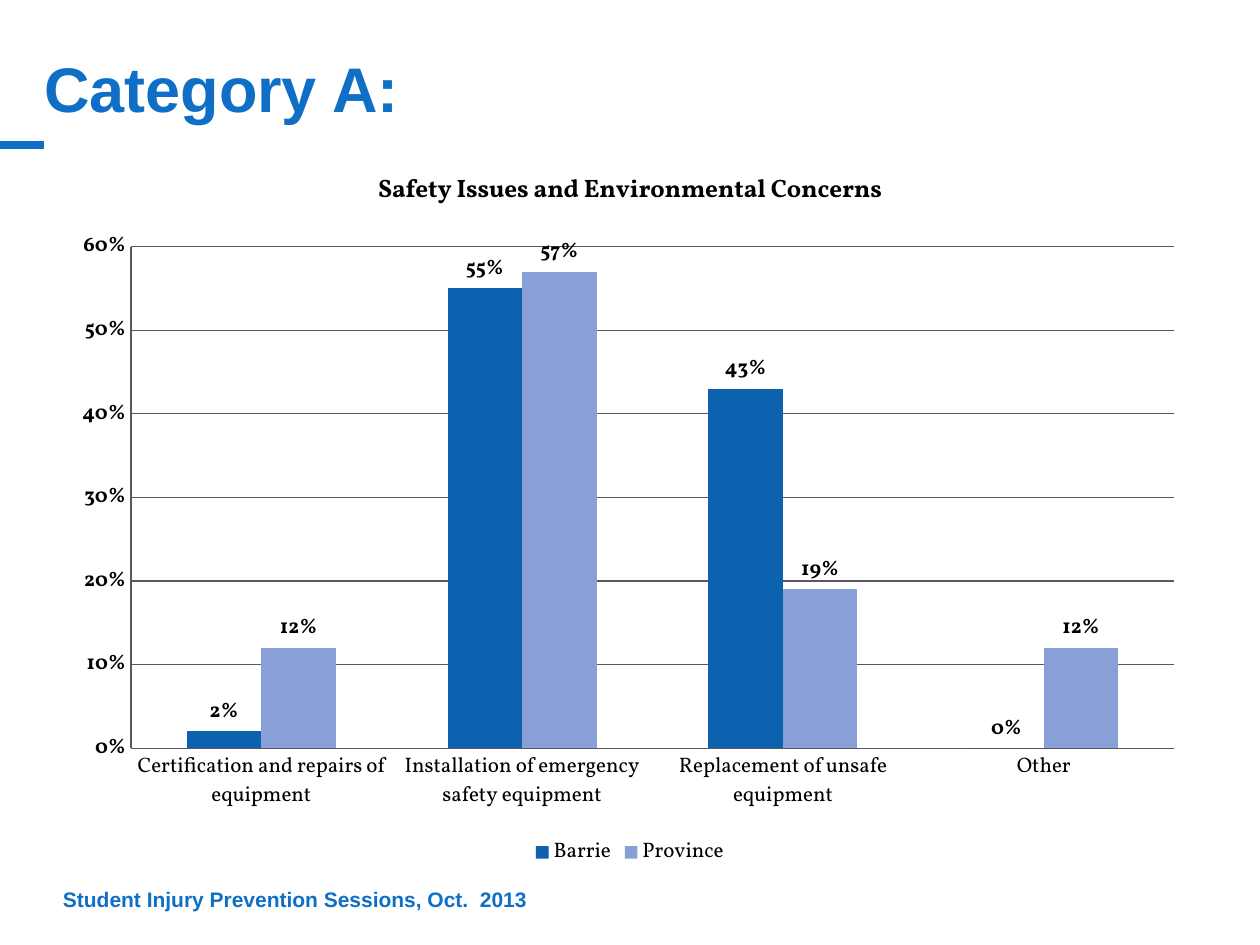
"""Build the Category A slide comparing Barrie with the province."""
from lxml import etree
from pptx import Presentation
from pptx import util as u
from pptx.chart.data import CategoryChartData
from pptx.dml.color import RGBColor
from pptx.enum import chart as c
from pptx.enum import shapes, text
from pptx.oxml import parse_xml
from pptx.oxml.ns import nsdecls, qn

TITLE = "Category A:"
FOOTER = "Student Injury Prevention Sessions, Oct.  2013"
CHART_TITLE = "Safety Issues and Environmental Concerns"
CATEGORIES = [
    "Certification and repairs of equipment",
    "Installation of emergency safety equipment",
    "Replacement of unsafe equipment",
    "Other",
]
SERIES = [
    ("Barrie", [0.02, 0.55, 0.43, 0], "barrie"),
    ("Province", [0.12, 0.57, 0.19, 0.12], "province"),
]
PLOT_AREA = {"x": 0.06, "y": 0.14, "w": 0.92, "h": 0.69}
THEME = {
    "accent": "0F6FC6", "barrie": "0C62AF", "province": "889FD7",
    "ink": "000000", "grid": "595959",
    "font": "Arial", "chart_font": "Vollkorn",
    "title": 36, "footer": 12, "chart_title": 14.4, "chart": 12,
}


def color(name):
    return RGBColor.from_string(THEME[name])


def style_font(font, size, ink="ink", face="chart_font", bold=False):
    font.size, font.name, font.bold = u.Pt(THEME[size]), THEME[face], bold
    font.color.rgb = color(ink)


def write(frame, words, *, top_inset=0, **style):
    frame.text = words
    frame.word_wrap = True
    frame.auto_size = text.MSO_AUTO_SIZE.NONE
    frame.vertical_anchor = text.MSO_ANCHOR.BOTTOM
    frame.margin_left = frame.margin_right = frame.margin_bottom = 0
    frame.margin_top = u.Inches(top_inset)
    paragraph = frame.paragraphs[0]
    paragraph.alignment = text.PP_ALIGN.LEFT
    style_font(paragraph.runs[0].font, **style)


def place(shape, *box):
    shape.left, shape.top, shape.width, shape.height = map(u.Inches, box)


def add_accent_line(slide):
    line = slide.shapes.add_connector(
        shapes.MSO_CONNECTOR.STRAIGHT, 0, u.Inches(1.15), u.Inches(0.35), u.Inches(1.15))
    line.line.color.rgb = color("accent")
    line.line.width = u.Pt(4.75)
    etree.SubElement(line.element.spPr, qn("a:effectLst"))


def set_plot_area(chart):
    plot_area = chart.element.find(".//" + qn("c:plotArea"))
    for layout in plot_area.findall(qn("c:layout")):
        plot_area.remove(layout)
    modes = '<c:xMode val="edge"/><c:yMode val="edge"/>'
    sizes = "".join(f'<c:{key} val="{value}"/>' for key, value in PLOT_AREA.items())
    plot_area.insert(0, parse_xml(
        f'<c:layout {nsdecls("c")}><c:manualLayout><c:layoutTarget val="inner"/>'
        f"{modes}{sizes}</c:manualLayout></c:layout>"))


def format_axes(chart):
    for axis, bold in ((chart.category_axis, False), (chart.value_axis, True)):
        axis.major_tick_mark = axis.minor_tick_mark = c.XL_TICK_MARK.NONE
        axis.format.line.color.rgb = color("grid")
        axis.format.line.width = u.Pt(0.75)
        style_font(axis.tick_labels.font, "chart", bold=bold)
    values = chart.value_axis
    values.minimum_scale, values.maximum_scale, values.major_unit = 0, 0.6, 0.1
    values.tick_labels.number_format = "0%"
    values.tick_labels.number_format_is_linked = False
    values.has_major_gridlines = True
    values.major_gridlines.format.line.color.rgb = color("grid")
    values.major_gridlines.format.line.width = u.Pt(0.75)


def format_series(plot):
    plot.gap_width, plot.overlap, plot.vary_by_categories = 150, 0, False
    for series, (_, _, fill) in zip(plot.series, SERIES):
        series.format.fill.solid()
        series.format.fill.fore_color.rgb = color(fill)
        series.invert_if_negative = False
        labels = series.data_labels
        labels.show_value = True
        labels.number_format, labels.number_format_is_linked = "0%", False
        labels.position = c.XL_LABEL_POSITION.OUTSIDE_END
        style_font(labels.font, "chart", bold=True)


def add_chart(slide):
    data = CategoryChartData(number_format="0%")
    data.categories = CATEGORIES
    for name, values, _ in SERIES:
        data.add_series(name, values)
    chart = slide.shapes.add_chart(
        c.XL_CHART_TYPE.COLUMN_CLUSTERED,
        *map(u.Inches, (0.5, 1.15, 9, 5.77)), data).chart
    style_font(chart.font, "chart")
    chart.has_title = True
    heading = chart.chart_title.text_frame
    heading.text = CHART_TITLE
    style_font(heading.paragraphs[0].runs[0].font, "chart_title", bold=True)
    chart.chart_title.include_in_layout = False
    chart.has_legend = True
    chart.legend.position = c.XL_LEGEND_POSITION.BOTTOM
    chart.legend.include_in_layout = False
    style_font(chart.legend.font, "chart")
    set_plot_area(chart)
    format_axes(chart)
    format_series(chart.plots[0])


def main():
    presentation = Presentation()
    presentation.slide_width, presentation.slide_height = u.Inches(10), u.Inches(7.5)
    slide = presentation.slides.add_slide(presentation.slide_layouts[5])
    heading = {"ink": "accent", "face": "font", "bold": True}
    add_accent_line(slide)
    title = slide.shapes.title
    place(title, 0.35, 0.36, 9, 0.63)
    write(title.text_frame, TITLE, top_inset=0.05, size="title", **heading)
    footer = slide.shapes.add_textbox(*map(u.Inches, (0.5, 6.98, 4.1, 0.26)))
    write(footer.text_frame, FOOTER, size="footer", **heading)
    add_chart(slide)
    presentation.save("out.pptx")


if __name__ == "__main__":
    main()
